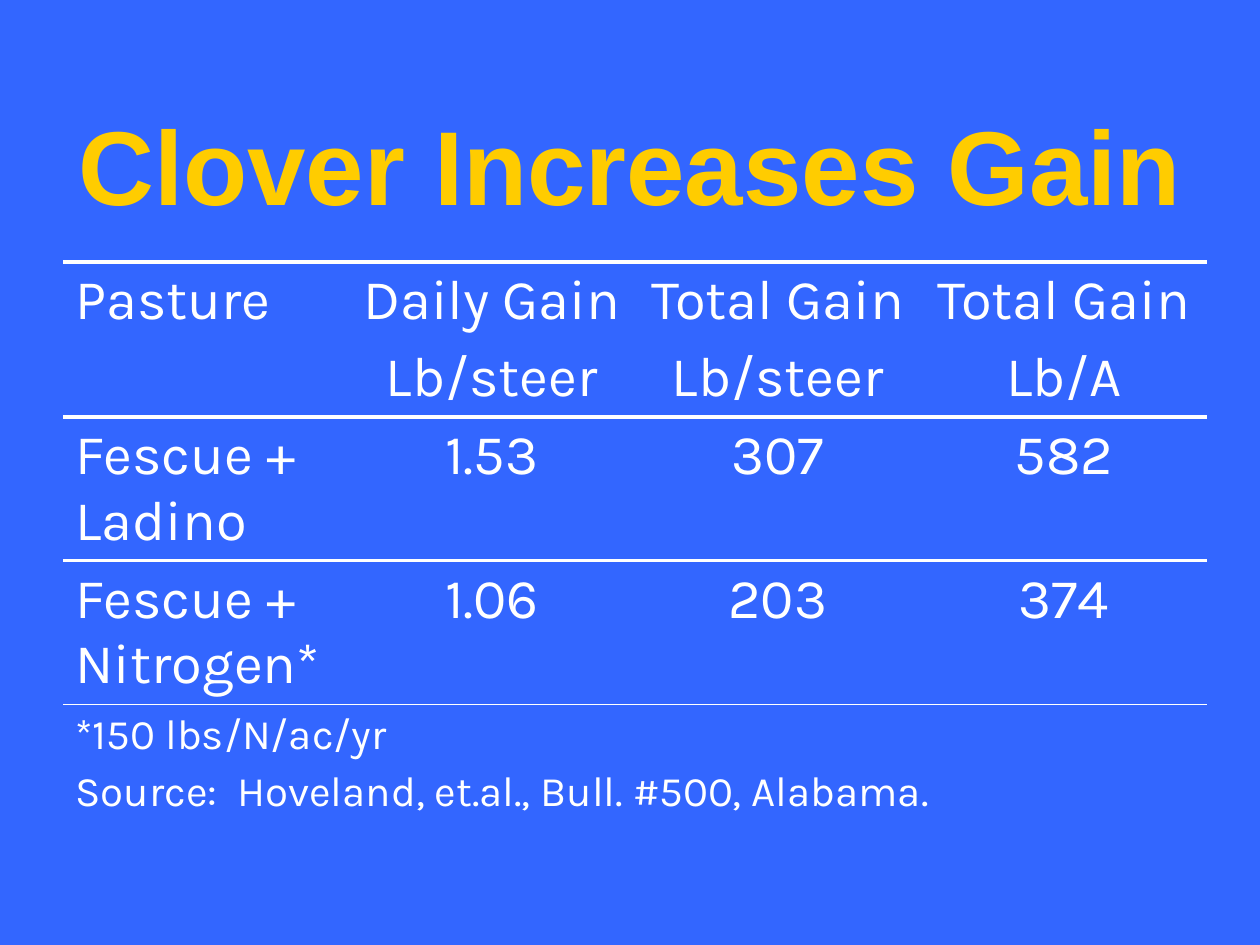
from lxml import etree
from pptx import Presentation
from pptx import util as u
from pptx.dml.color import RGBColor
from pptx.enum import text
from pptx.oxml import parse_xml
from pptx.oxml.ns import nsdecls, qn

BLUE = RGBColor(0x33, 0x66, 0xFF)
GOLD = RGBColor(0xFF, 0xCC, 0x00)
WHITE = RGBColor(0xFF, 0xFF, 0xFF)
NO_GRID_STYLE = "{2D5ABB26-0587-4C30-8999-92F81FD0307C}"

HEADER = ["Pasture", "Daily Gain\nLb/steer", "Total Gain\nLb/steer", "Total Gain\nLb/A"]
PASTURES = [
    ["Fescue + Ladino", "1.53", "307", "582"],
    ["Fescue + Nitrogen*", "1.06", "203", "374"],
]
FOOTNOTE = "*150 lbs/N/ac/yr\nSource:  Hoveland, et.al., Bull. #500, Alabama."
ROW_HEIGHTS = [1.02, 1.02, 1.02, 0.5]
RULE_WIDTHS = [2.25, 2.25, 2.25, 1, None]  # above each row, then below the last


class SlideBuilder:
    title_font = "Arial"
    body_font = "Karla"

    def __init__(self, presentation):
        self.slide = presentation.slides.add_slide(presentation.slide_layouts[5])
        fill = self.slide.background.fill
        fill.solid()
        fill.fore_color.rgb = BLUE

    def format_run(self, run, font, size, color, bold=False):
        run.font.name = font
        run.font.size = u.Pt(size)
        run.font.bold = bold
        run.font.color.rgb = color

    def add_title(self, words, left, top, width, height):
        title = self.slide.shapes.title
        title.left, title.top = u.Inches(left), u.Inches(top)
        title.width, title.height = u.Inches(width), u.Inches(height)
        frame = title.text_frame
        frame.text = words
        frame.vertical_anchor = text.MSO_ANCHOR.MIDDLE
        paragraph = frame.paragraphs[0]
        paragraph.alignment = text.PP_ALIGN.CENTER
        run = paragraph.runs[0]
        self.format_run(run, self.title_font, 60, GOLD, bold=True)
        shadow = parse_xml(
            f'<a:effectLst {nsdecls("a")}><a:outerShdw dist="38100" dir="2700000" algn="tl">'
            '<a:srgbClr val="000000"/></a:outerShdw></a:effectLst>'
        )
        run.font._element.find(qn("a:solidFill")).addnext(shadow)

    def add_rule(self, cell, side, width):
        """Draw one horizontal cell border; side is lnT or lnB."""
        line = parse_xml(
            f'<a:{side} {nsdecls("a")} w="{u.Pt(width)}"><a:solidFill>'
            f'<a:srgbClr val="{WHITE}"/></a:solidFill></a:{side}>'
        )
        properties = cell._tc.get_or_add_tcPr()
        fill = properties.find(qn("a:noFill"))
        fill.addprevious(line)

    def fill_cell(self, cell, words, size, alignment):
        cell.text_frame.text = words
        for index, paragraph in enumerate(cell.text_frame.paragraphs):
            paragraph.alignment = alignment
            if index:
                paragraph.space_before = u.Pt(0.2 * size)
            for run in paragraph.runs:
                self.format_run(run, self.body_font, size, WHITE)

    def add_table(self, rows, footnote, left, top, width, height):
        columns = len(rows[0])
        frame = self.slide.shapes.add_table(
            len(rows) + 1, columns,
            u.Inches(left), u.Inches(top), u.Inches(width), u.Inches(height),
        )
        table = frame.table
        table.first_row = table.horz_banding = False
        table._tbl.tblPr.find(qn("a:tableStyleId")).text = NO_GRID_STYLE
        for row, row_height in zip(table.rows, ROW_HEIGHTS):
            row.height = u.Inches(row_height)
        frame.height = u.Inches(height)

        for row_index, row in enumerate(rows):
            for column, words in enumerate(row):
                alignment = text.PP_ALIGN.CENTER if column else text.PP_ALIGN.LEFT
                self.fill_cell(table.cell(row_index, column), words, 32, alignment)
        last = len(rows)
        table.cell(last, 0).merge(table.cell(last, columns - 1))
        self.fill_cell(table.cell(last, 0), footnote, 24, text.PP_ALIGN.LEFT)

        for row_index, row in enumerate(table.rows):
            for cell in row.cells:
                cell.fill.background()
                for side, width in zip(("lnT", "lnB"), RULE_WIDTHS[row_index:]):
                    if width:
                        self.add_rule(cell, side, width)


def main():
    presentation = Presentation()
    presentation.slide_width = u.Inches(10)
    presentation.slide_height = u.Inches(7.5)
    builder = SlideBuilder(presentation)
    builder.add_title("Clover Increases Gain", 0.25, 0.67, 9.5, 1.25)
    builder.add_table([HEADER] + PASTURES, FOOTNOTE, 0.5, 2.08, 9.08, 4.59)
    presentation.save("out.pptx")


if __name__ == "__main__":
    main()
